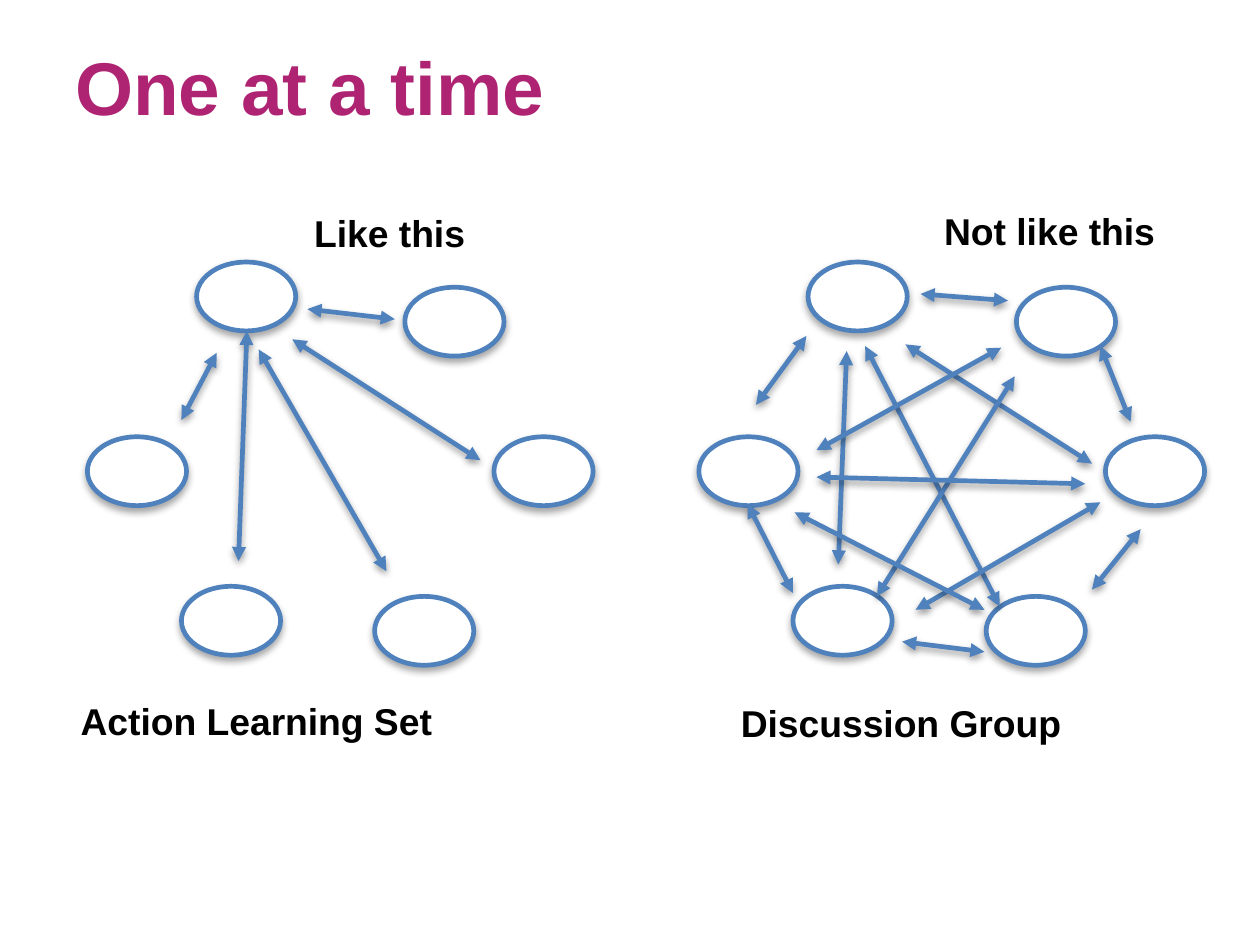
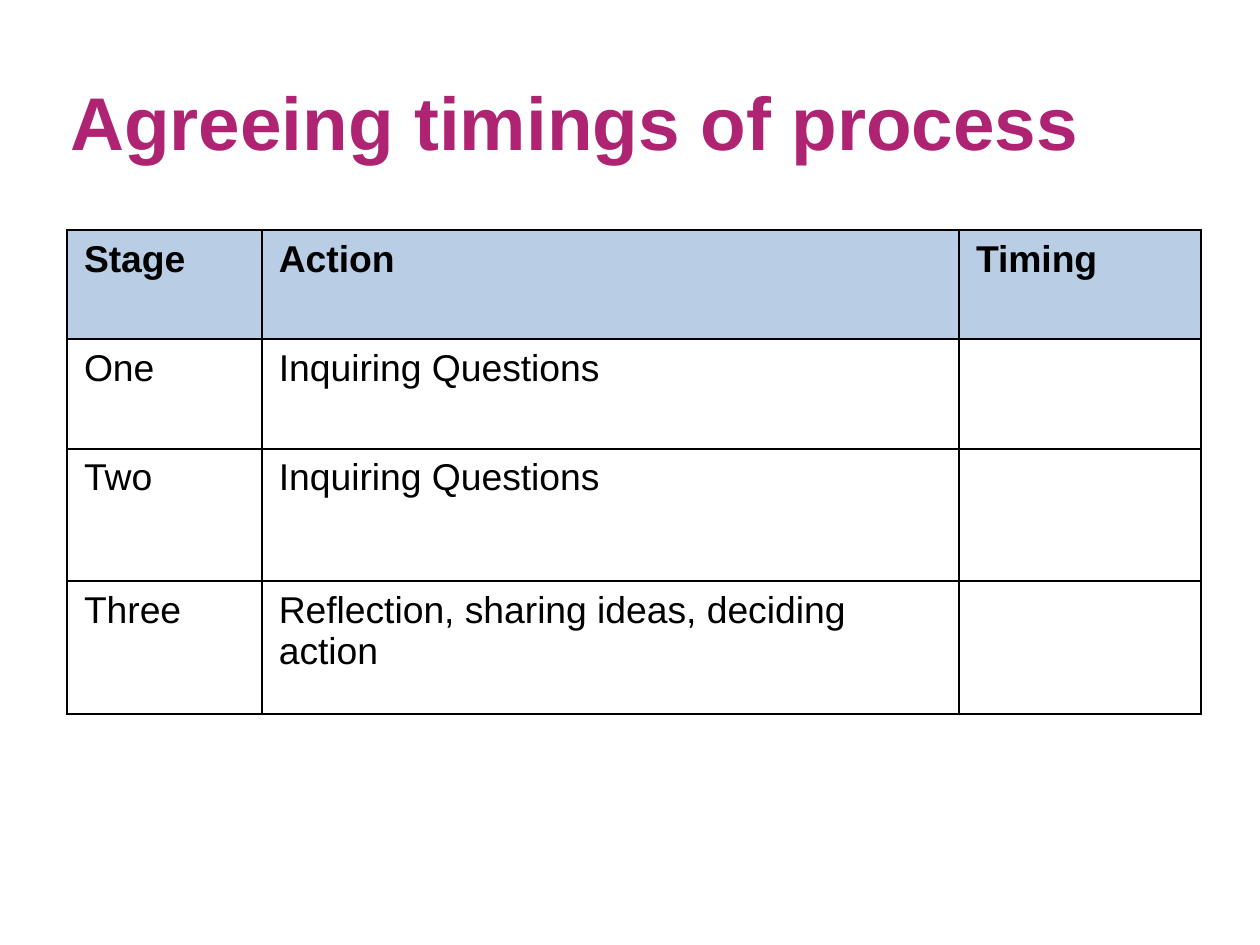
from lxml.etree import SubElement as Sub
from pptx import Presentation
from pptx.dml.color import RGBColor
from pptx.enum.shapes import MSO_CONNECTOR as Conn, MSO_SHAPE as Shape
from pptx.enum.text import MSO_ANCHOR as Anchor, MSO_AUTO_SIZE as Fit
from pptx.oxml.ns import qn
from pptx.util import Pt

SCALE = 9144
PLUM, BLUE, PALE = "AE2473", "4F81BD", "B9CDE5"
BLACK, WHITE = "000000", "FFFFFF"

OVALS = [(117, 156), (52, 260), (108, 349), (223, 355), (294, 260), (241, 171)]
SHIFT = 364
SPOKES = [
    (129, 210, 108, 250), (235, 190, 183, 184), (147, 197, 142, 334),
    (154, 208, 230, 340), (174, 202, 286, 274),
]
MESH = [
    (480, 200, 450, 241), (515, 206, 595, 361), (504, 209, 499, 336),
    (600, 179, 548, 175), (539, 205, 650, 276), (604, 224, 522, 355),
    (486, 284, 646, 288), (486, 268, 596, 207), (655, 299, 545, 363),
    (679, 315, 650, 351), (586, 363, 473, 305), (655, 206, 673, 251),
    (586, 388, 537, 382), (472, 353, 445, 300),
]
LABELS = [
    ("Like this", 182, 120, 101), ("Not like this", 557, 119, 138),
    ("Action Learning Set", 43, 411, 222), ("Discussion Group", 436, 412, 203),
]
STAGES = [
    ("Stage", "Action", "Timing"),
    ("One", "Inquiring Questions", ""),
    ("Two", "Inquiring Questions", ""),
    ("Three", "Reflection, sharing ideas, deciding action", ""),
]


def px(*vals):
    return [val * SCALE for val in vals]


def color(code):
    return RGBColor.from_string(code)


class Deck:
    """Holds the shared style and the current slide."""

    def __init__(self, wide):
        self.prs = Presentation()
        self.prs.slide_width = wide * SCALE
        self.prs.slide_height = wide * SCALE * 3 // 4

    def page(self, title, left, top):
        self.slide = self.prs.slides.add_slide(self.prs.slide_layouts[6])
        frame = self.text(title, left, top, 675, 94, 32, PLUM, 10)
        frame.word_wrap = True
        frame.vertical_anchor = Anchor.MIDDLE

    def style(self, para, size, code=BLACK, bold=True):
        font = para.font
        font.name, font.size, font.bold = "Arial", Pt(size), bold
        font.color.rgb = color(code)

    def text(self, words, left, top, wide, high, size, code, side):
        box = self.slide.shapes.add_textbox(*px(left, top, wide, high))
        frame = box.text_frame
        frame.margin_left, frame.margin_right = px(side, side)
        frame.margin_top, frame.margin_bottom = px(5, 5)
        frame.text = words
        self.style(frame.paragraphs[0], size, code)
        return frame

    def label(self, words, left, top, wide):
        frame = self.text(words, left, top, wide, 37, 16, BLACK, 5)
        frame.word_wrap = False
        frame.auto_size = Fit.SHAPE_TO_FIT_TEXT

    def edge(self, item, alpha, drop):
        item.line.color.rgb = color(BLUE)
        item.line.width = Pt(2)
        effects = Sub(item._element.spPr, qn("a:effectLst"))
        shade = Sub(effects, qn("a:outerShdw"), blurRad=str(Pt(3)),
                    dist=str(Pt(drop)), dir="5400000", rotWithShape="0")
        tint = Sub(shade, qn("a:srgbClr"), val=BLACK)
        Sub(tint, qn("a:alpha"), val=str(alpha * 1000))

    def oval(self, group, left, top):
        item = group.shapes.add_shape(Shape.OVAL, *px(left, top, 59, 41))
        item.fill.solid()
        item.fill.fore_color.rgb = color(WHITE)
        self.edge(item, 35, 1.8)

    def arrow(self, group, ends):
        item = group.shapes.add_connector(Conn.STRAIGHT, *px(*ends))
        self.edge(item, 38, 1.6)
        for tip in ("a:headEnd", "a:tailEnd"):
            Sub(item.line._ln, qn(tip), type="triangle")

    def ring(self, shift, links):
        group = self.slide.shapes.add_group_shape()
        for left, top in OVALS:
            self.oval(group, left + shift, top)
        for ends in links:
            self.arrow(group, ends)

    def cell(self, cell, words, head):
        props = cell._tc.get_or_add_tcPr()
        for side in "LRTB":
            line = Sub(props, qn("a:ln" + side), w=str(Pt(1)))
            Sub(Sub(line, qn("a:solidFill")), qn("a:srgbClr"), val=BLACK)
        if head:
            cell.fill.solid()
            cell.fill.fore_color.rgb = color(PALE)
        else:
            cell.fill.background()
        cell.text = words
        self.style(cell.text_frame.paragraphs[0], 16, bold=head)

    def table(self, data, left, top, cols, rows):
        area = px(left, top, sum(cols), sum(rows))
        grid = self.slide.shapes.add_table(len(rows), len(cols), *area).table
        grid.first_row = grid.horz_banding = False
        for col, wide in zip(grid.columns, px(*cols)):
            col.width = wide
        for row, high in zip(grid.rows, px(*rows)):
            row.height = high
        for y, line in enumerate(data):
            for x, words in enumerate(line):
                self.cell(grid.cell(y, x), words, y == 0)


def main():
    deck = Deck(750)
    deck.page("One at a time", 35, 4)
    deck.ring(0, SPOKES)
    deck.ring(SHIFT, MESH)
    for label in LABELS:
        deck.label(*label)
    deck.page("Agreeing timings of process", 32, 25)
    deck.table(STAGES, 40, 137, (116, 415, 144), (65, 65, 79, 79))
    deck.prs.save("out.pptx")


if __name__ == "__main__":
    main()
